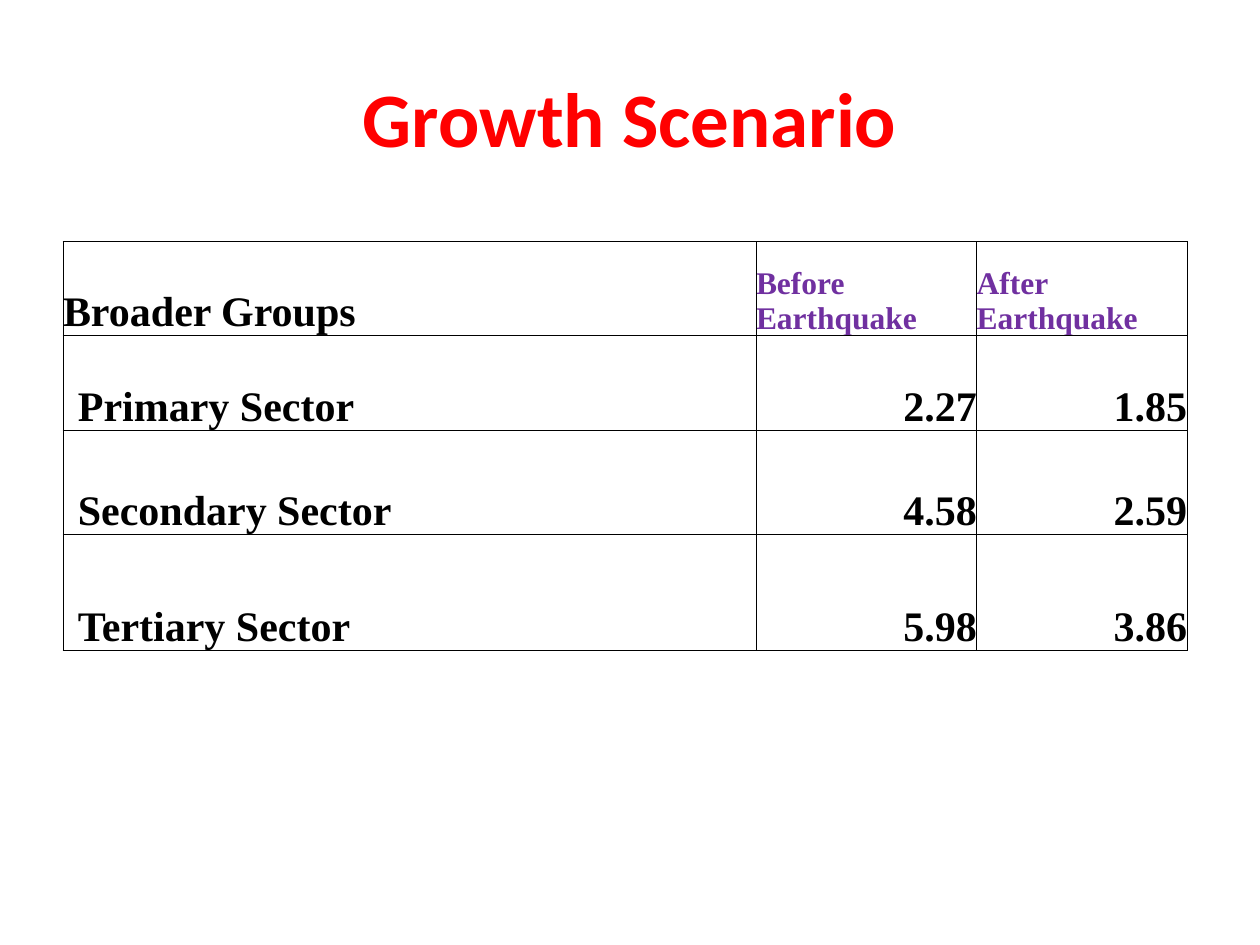
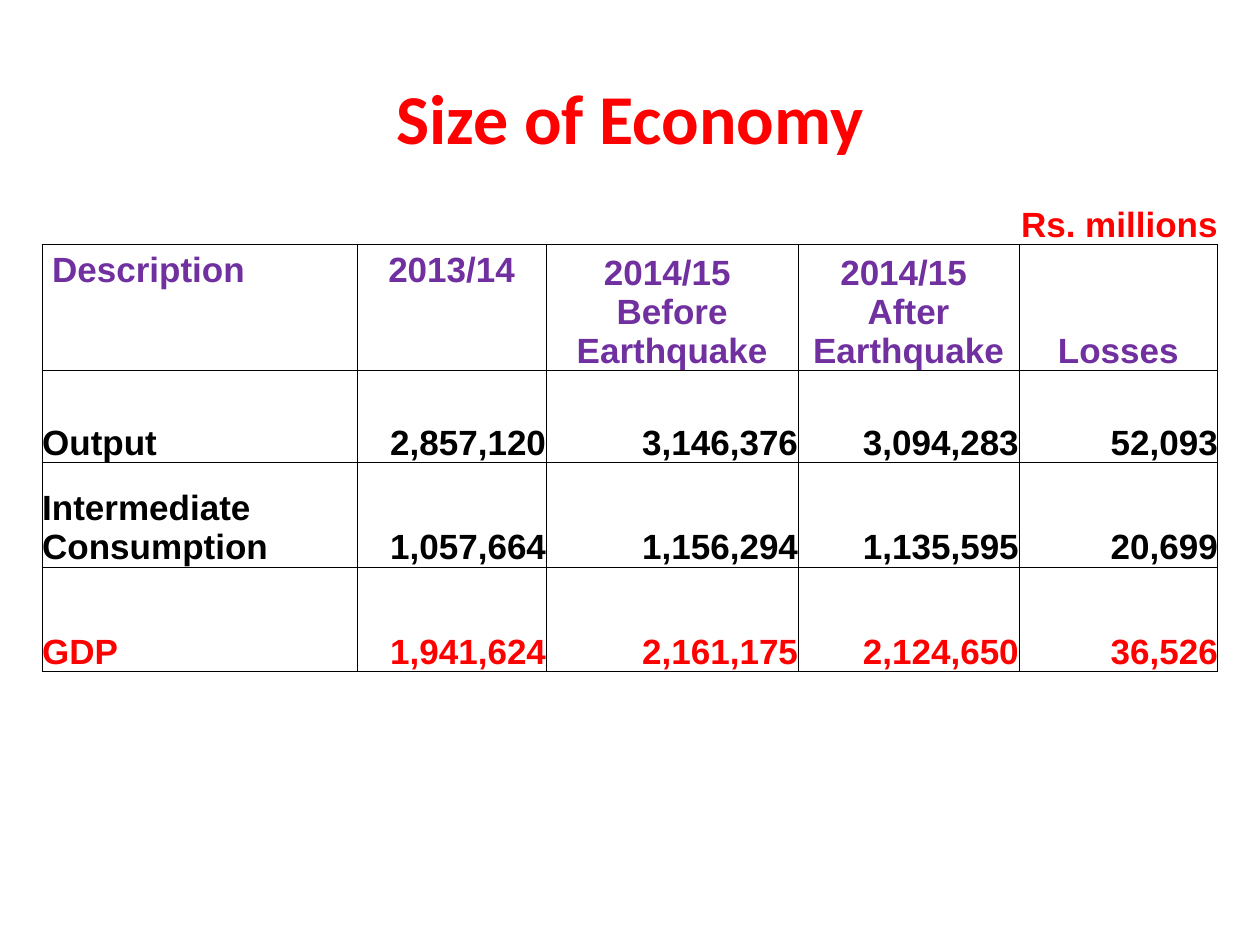
from dataclasses import dataclass

from lxml import etree
from pptx import Presentation
from pptx.dml.color import RGBColor
from pptx.enum.text import MSO_ANCHOR, PP_ALIGN
from pptx.oxml.ns import qn
from pptx.util import Cm, Pt

LEFT, CENTER, RIGHT = PP_ALIGN.LEFT, PP_ALIGN.CENTER, PP_ALIGN.RIGHT
TOP, MIDDLE, BOTTOM = MSO_ANCHOR.TOP, MSO_ANCHOR.MIDDLE, MSO_ANCHOR.BOTTOM


@dataclass(frozen=True)
class Theme:
    accent: str = "FF0000"
    header: str = "7030A0"
    ink: str = "000000"
    title_font: str = "Calibri"
    growth_font: str = "Times New Roman"
    economy_font: str = "Arial"
    growth_title: int = 44
    economy_title: int = 40
    growth_body: int = 24
    growth_header: int = 18
    economy_body: int = 20
    rule: float = 0.5


theme = Theme()


def write(tf, text, font, size, color=theme.ink, align=LEFT):
    tf.word_wrap = True
    for i, line in enumerate(text.split("\n")):
        p = tf.paragraphs[0] if i == 0 else tf.add_paragraph()
        p.alignment = align
        r = p.add_run()
        r.text = line
        r.font.name = font
        r.font.size = Pt(size)
        r.font.bold = True
        r.font.color.rgb = RGBColor.from_string(color)


def add_grid(slide, left, top, widths, heights, open_rows=0):
    frame = slide.shapes.add_table(len(heights), len(widths), Cm(left), Cm(top),
                                   Cm(sum(widths)), Cm(sum(heights)))
    table = frame.table
    table.first_row = table.horz_banding = False
    for col, width in zip(table.columns, widths):
        col.width = Cm(width)
    for i, (row, height) in enumerate(zip(table.rows, heights)):
        row.height = Cm(height)
        for cell in row.cells:
            cell.margin_left = cell.margin_right = 0
            cell.margin_top = cell.margin_bottom = 0
            cell.vertical_anchor = BOTTOM
            tcPr = cell._tc.get_or_add_tcPr()
            for side in ("lnL", "lnR", "lnT", "lnB"):
                ln = etree.SubElement(tcPr, qn(f"a:{side}"), w=str(Pt(theme.rule)))
                if i < open_rows and side != "lnB":
                    etree.SubElement(ln, qn("a:noFill"))
                else:
                    fill = etree.SubElement(ln, qn("a:solidFill"))
                    etree.SubElement(fill, qn("a:srgbClr"), val=theme.ink)
            cell.fill.background()
    return table


prs = Presentation()
prs.slide_width, prs.slide_height = Cm(25.4), Cm(19.05)

slides = []
for title, size in (("Growth Scenario", theme.growth_title),
                    ("Size of Economy", theme.economy_title)):
    slide = prs.slides.add_slide(prs.slide_layouts[6])
    tf = slide.shapes.add_textbox(Cm(1.27), Cm(0.76), Cm(22.86), Cm(3.18)).text_frame
    tf.vertical_anchor = MIDDLE
    write(tf, title, theme.title_font, size, theme.accent, CENTER)
    slides.append(slide)
growth_slide, economy_slide = slides

growth_rows = [
    ("Broader Groups", "Before Earthquake", "After Earthquake"),
    ("Primary Sector", "2.27", "1.85"),
    ("Secondary Sector", "4.58", "2.59"),
    ("Tertiary Sector", "5.98", "3.86"),
]
growth = add_grid(growth_slide, 1.27, 4.87, [13.97, 4.45, 4.24], [1.9, 1.9, 2.11, 2.34])
for i, values in enumerate(growth_rows):
    for j, value in enumerate(values):
        cell = growth.cell(i, j)
        if i and j == 0:
            cell.margin_left = Cm(0.3)
        period = i == 0 and j > 0
        write(cell.text_frame, value, theme.growth_font,
              theme.growth_header if period else theme.growth_body,
              theme.header if period else theme.ink,
              RIGHT if i and j else LEFT)

economy_rows = [
    ("Description", "2013/14", "2014/15 \nBefore Earthquake", "2014/15 \nAfter Earthquake", "Losses"),
    ("Output", "2,857,120", "3,146,376", "3,094,283", "52,093"),
    ("Intermediate Consumption", "1,057,664", "1,156,294", "1,135,595", "20,699"),
    ("GDP", "1,941,624", "2,161,175", "2,124,650", "36,526"),
]
economy = add_grid(economy_slide, 0.85, 3.81, [6.35, 3.81, 5.08, 4.45, 4.01],
                   [1.12, 2.49, 1.85, 2.11, 2.11], open_rows=1)
write(economy.cell(0, 4).text_frame, "Rs. millions", theme.economy_font,
      theme.economy_body, theme.accent, RIGHT)
row_colors = [theme.header, theme.ink, theme.ink, theme.accent]
for i, (values, color) in enumerate(zip(economy_rows, row_colors)):
    for j, value in enumerate(values):
        cell = economy.cell(i + 1, j)
        if i == 0 and j < 2:
            cell.vertical_anchor = TOP
            cell.margin_top = Cm(0.12)
        if j == 0:
            align = LEFT
        else:
            align = RIGHT if i else CENTER
        write(cell.text_frame, value, theme.economy_font, theme.economy_body, color, align)
economy.cell(1, 0).margin_left = Cm(0.2)

prs.save("out.pptx")
